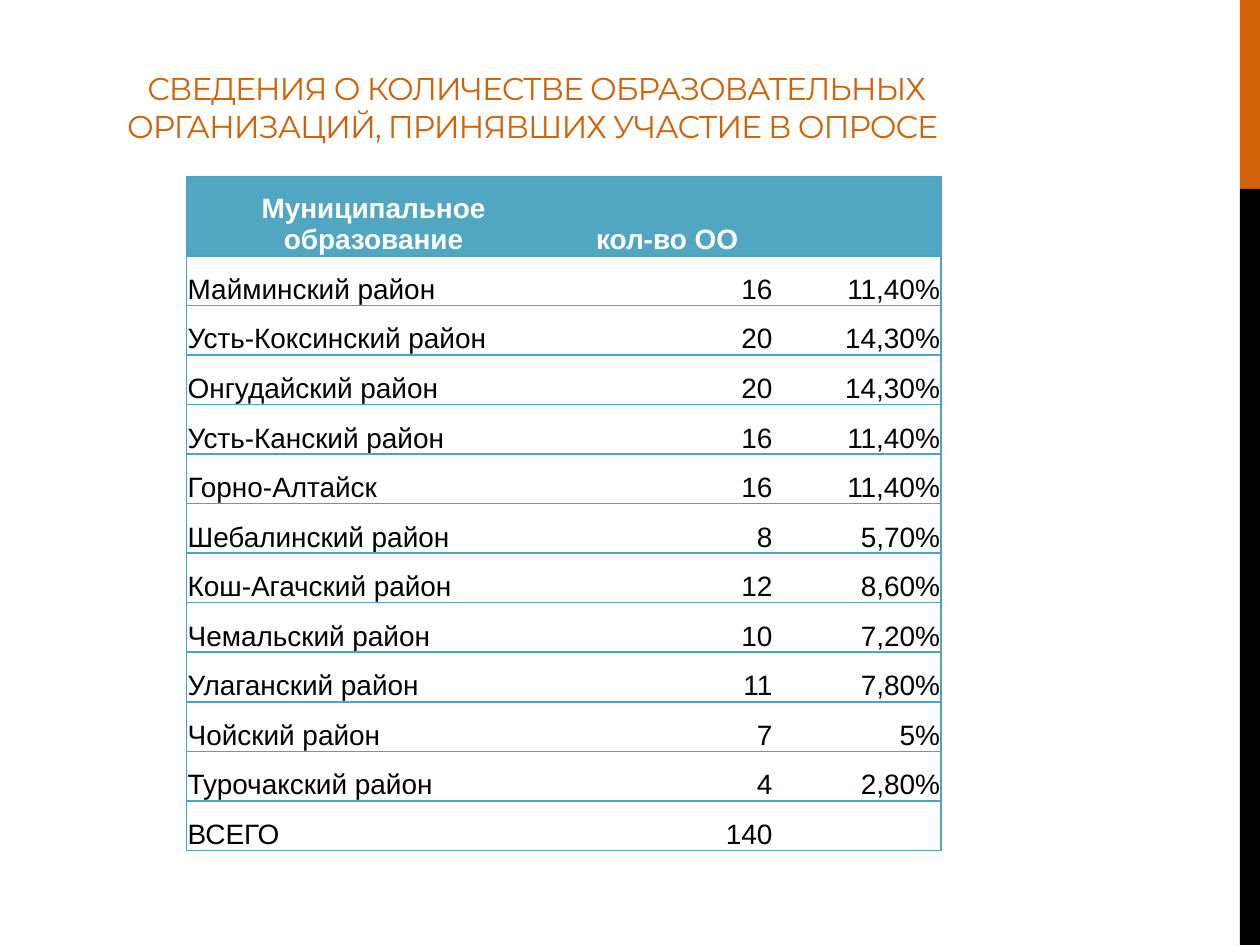
from pptx import Presentation
from pptx.dml.color import RGBColor
from pptx.enum.shapes import MSO_SHAPE as Shape
from pptx.enum.text import MSO_ANCHOR as Anchor, PP_ALIGN as Align
from pptx.oxml import parse_xml
from pptx.oxml.ns import nsdecls
from pptx.util import Inches, Pt

ORANGE = RGBColor(0xD1, 0x62, 0x07)
BLACK = RGBColor(0, 0, 0)
WHITE = RGBColor(0xFF, 0xFF, 0xFF)
HEADER_BLUE = RGBColor(0x51, 0xA6, 0xC2)
BORDER_BLUE = RGBColor(0x4C, 0xA4, 0xC0)
PLAIN_TABLE_STYLE = "{2D5ABB26-0587-4C30-8999-92F81FD0307C}"

ROWS = [
    ("Муниципальное образование", "кол-во ОО", ""),
    ("Майминский район", "16", "11,40%"),
    ("Усть-Коксинский район", "20", "14,30%"),
    ("Онгудайский район", "20", "14,30%"),
    ("Усть-Канский район", "16", "11,40%"),
    ("Горно-Алтайск", "16", "11,40%"),
    ("Шебалинский район", "8", "5,70%"),
    ("Кош-Агачский район", "12", "8,60%"),
    ("Чемальский район", "10", "7,20%"),
    ("Улаганский район", "11", "7,80%"),
    ("Чойский район", "7", "5%"),
    ("Турочакский район", "4", "2,80%"),
    ("ВСЕГО", "140", ""),
]
COLUMN_WIDTHS = [2.97, 1.69, 1.33]
TABLE_HEIGHT, HEADER_HEIGHT = 5.35, 0.63
BODY_HEIGHT = (TABLE_HEIGHT - HEADER_HEIGHT) / (len(ROWS) - 1)


def set_format(target, values):
    for name, value in values.items():
        setattr(target, name, value)


def add_borders(cell, sides):
    properties = cell._tc.get_or_add_tcPr()
    for position, side in enumerate(sides):
        properties.insert(position, parse_xml(
            f'<a:ln{side} {nsdecls("a")} w="12700"><a:solidFill>'
            f'<a:srgbClr val="{BORDER_BLUE}"/></a:solidFill></a:ln{side}>'))


presentation = Presentation()
set_format(presentation, {"slide_width": Inches(10), "slide_height": Inches(7.5)})
slide = presentation.slides.add_slide(presentation.slide_layouts[6])

# Stripe along the right edge
for top, height, color in [(0, 1.5, ORANGE), (1.5, 6, BLACK)]:
    stripe = slide.shapes.add_shape(
        Shape.RECTANGLE, Inches(9.84), Inches(top), Inches(0.16), Inches(height))
    stripe.shadow.inherit = False
    stripe.fill.solid()
    stripe.fill.fore_color.rgb = color
    stripe.line.fill.background()

# Table
table_frame = slide.shapes.add_table(
    len(ROWS), len(COLUMN_WIDTHS), Inches(1.48), Inches(1.4),
    Inches(sum(COLUMN_WIDTHS)), Inches(TABLE_HEIGHT))
table = table_frame.table
table._tbl.tblPr.find("{*}tableStyleId").text = PLAIN_TABLE_STYLE
for column, width in zip(table.columns, COLUMN_WIDTHS):
    column.width = Inches(width)

cell_format = {
    "vertical_anchor": Anchor.BOTTOM,
    "margin_left": Inches(0.01), "margin_right": Inches(0.01),
    "margin_top": Inches(0.01), "margin_bottom": 0,
}
for row_index, row in enumerate(ROWS):
    is_header = row_index == 0
    table.rows[row_index].height = Inches(HEADER_HEIGHT if is_header else BODY_HEIGHT)
    for column_index, text in enumerate(row):
        cell = table.cell(row_index, column_index)
        set_format(cell, cell_format)
        if is_header:
            cell.fill.solid()
            cell.fill.fore_color.rgb = HEADER_BLUE
        else:
            cell.fill.background()
        # Every row is ruled; only the outer columns have a vertical border
        outer_side = {0: ["L"], len(row) - 1: ["R"]}.get(column_index, [])
        add_borders(cell, outer_side + ["T", "B"])

        paragraph = cell.text_frame.paragraphs[0]
        body_alignment = Align.LEFT if column_index == 0 else Align.RIGHT
        paragraph.alignment = Align.CENTER if is_header else body_alignment
        if text:
            run = paragraph.add_run()
            run.text = text
            set_format(run.font, {"name": "Arial", "size": Pt(16), "bold": is_header})
            run.font.color.rgb = WHITE if is_header else BLACK

# Title
title = slide.shapes.add_textbox(Inches(0.51), Inches(0.34), Inches(7.49), Inches(0.86))
set_format(title.text_frame, {"word_wrap": True, "vertical_anchor": Anchor.BOTTOM})
paragraph = title.text_frame.paragraphs[0]
paragraph.alignment = Align.CENTER
run = paragraph.add_run()
run.text = ("СВЕДЕНИЯ О КОЛИЧЕСТВЕ ОБРАЗОВАТЕЛЬНЫХ "
            "ОРГАНИЗАЦИЙ, ПРИНЯВШИХ УЧАСТИЕ В ОПРОСЕ ")
set_format(run.font, {"name": "Montserrat", "size": Pt(18)})
run.font.color.rgb = ORANGE
run.font._element.set("spc", "-60")

presentation.save("out.pptx")
